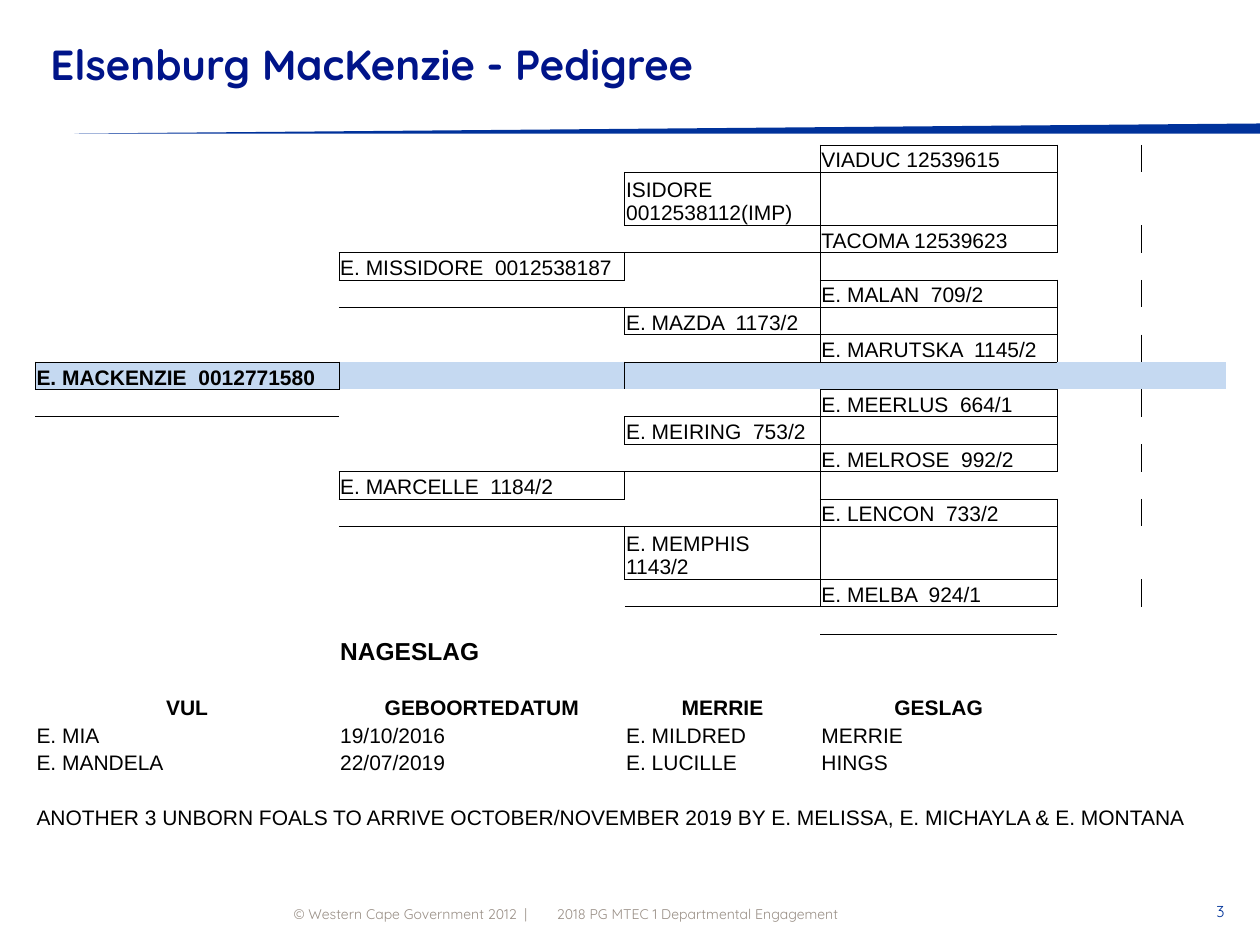
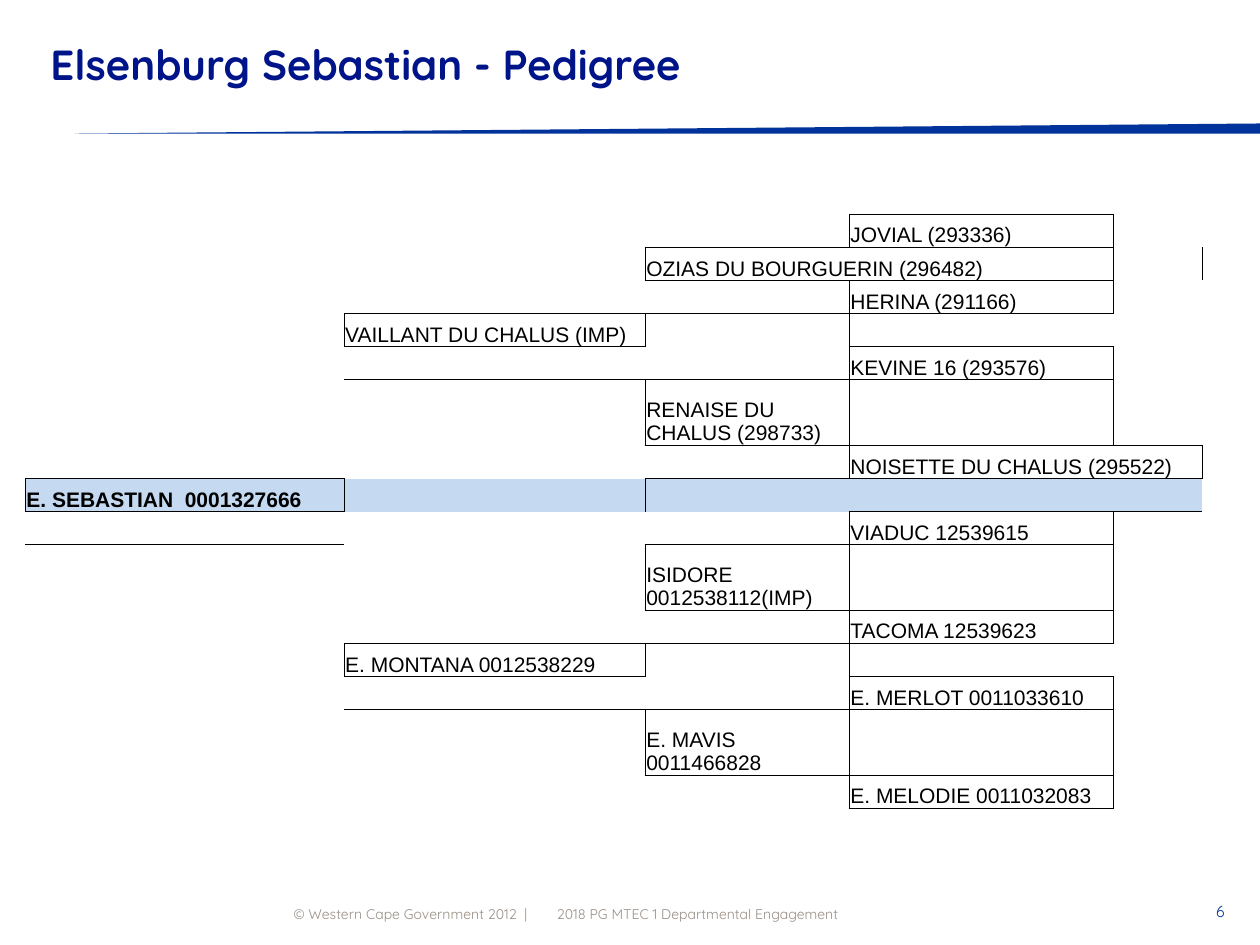
"""Build two horse pedigree slides with a shared title, band and footer."""
import collections

import lxml.etree
import pptx
import pptx.dml.color
import pptx.enum.shapes
import pptx.enum.text
import pptx.oxml.ns
import pptx.util

Inches = pptx.util.Inches
Pt = pptx.util.Pt
RGBColor = pptx.dml.color.RGBColor
Align = pptx.enum.text.PP_ALIGN
Anchor = pptx.enum.text.MSO_ANCHOR
qn = pptx.oxml.ns.qn

NAVY = RGBColor(0x00, 0x14, 0x89)
BAND_BLUE = RGBColor(0x00, 0x32, 0x9B)
NUMBER_BLUE = RGBColor(0x00, 0x33, 0x99)
FOOTER_GREY = RGBColor(0x99, 0x8F, 0x86)
ROW_BLUE = RGBColor(0xC5, 0xD9, 0xF1)
BLACK = RGBColor(0x00, 0x00, 0x00)
HEADING_FONT = "Quicksand"
TABLE_FONT = "Arial"
PLAIN_STYLE = "{2D5ABB26-0587-4C30-8999-92F81FD0307C}"

LAST_GENERATION = 3
HORSE_ROW = 7
EDGES = ("lnL", "lnR", "lnT", "lnB")

MACKENZIE_TREE = [
    ["E. MACKENZIE  0012771580"],
    ["E. MISSIDORE  0012538187", "E. MARCELLE  1184/2"],
    ["ISIDORE 0012538112(IMP)", "E. MAZDA  1173/2", "E. MEIRING  753/2", "E. MEMPHIS  1143/2"],
    ["VIADUC 12539615", "TACOMA 12539623", "E. MALAN  709/2", "E. MARUTSKA  1145/2",
     "E. MEERLUS  664/1", "E. MELROSE  992/2", "E. LENCON  733/2", "E. MELBA  924/1"],
]
SEBASTIAN_TREE = [
    ["E. SEBASTIAN  0001327666"],
    ["VAILLANT DU CHALUS (IMP)", "E. MONTANA 0012538229"],
    ["OZIAS DU BOURGUERIN (296482)", "RENAISE DU CHALUS (298733)",
     "ISIDORE 0012538112(IMP)", "E. MAVIS 0011466828"],
    ["JOVIAL (293336)", "HERINA (291166)", "KEVINE 16 (293576)",
     "NOISETTE DU CHALUS (295522)", "VIADUC 12539615", "TACOMA 12539623",
     "E. MERLOT 0011033610", "E. MELODIE 0011032083"],
]
FOAL_HEADINGS = ["VUL", "GEBOORTEDATUM", "MERRIE", "GESLAG"]
FOALS = [
    ["E. MIA", "19/10/2016", "E. MILDRED", "MERRIE"],
    ["E. MANDELA", "22/07/2019", "E. LUCILLE", "HINGS"],
]
FOAL_NOTE = ("ANOTHER 3 UNBORN FOALS TO ARRIVE OCTOBER/NOVEMBER 2019 "
             "BY E. MELISSA, E. MICHAYLA & E. MONTANA")


def add_span(para, text, font, size, color, bold=False):
    """Add one formatted run to a paragraph."""
    span = para.add_run()
    span.text = text
    span.font.name = font
    span.font.size = Pt(size)
    span.font.bold = bold
    span.font.color.rgb = color


def add_label(page, place, text, size, color, insets, anchor, align=Align.LEFT, bold=False):
    """Add a one-line text box in the heading font."""
    box = page.shapes.add_textbox(*map(Inches, place))
    frame = box.text_frame
    frame.word_wrap = True
    frame.vertical_anchor = anchor
    (frame.margin_left, frame.margin_top,
     frame.margin_right, frame.margin_bottom) = map(Inches, insets)
    para = frame.paragraphs[0]
    para.alignment = align
    add_span(para, text, HEADING_FONT, size, color, bold)


def add_band(page):
    """Add the thin wedge below the title."""
    wedge = page.shapes.add_shape(
        pptx.enum.shapes.MSO_SHAPE.RIGHT_TRIANGLE,
        Inches(0.59), Inches(0.98), Inches(9.41), Inches(0.08))
    wedge.shadow.inherit = False
    wedge.fill.solid()
    wedge.fill.fore_color.rgb = BAND_BLUE
    wedge.line.fill.background()
    wedge._element.spPr.xfrm.set("flipH", "1")


def add_page(deck, title, number):
    """Add a blank page with title, band and footer."""
    page = deck.slides.add_slide(deck.slide_layouts[6])
    add_label(page, (2.25, 7.07, 2.13, 0.25), "© Western Cape Government 2012  |",
              8, FOOTER_GREY, (0.08, 0.08, 0, 0), Anchor.BOTTOM)
    add_band(page)
    add_label(page, (0.32, 0.2, 9.4, 0.61), title, 24, NAVY,
              (0.08, 0.08, 0.08, 0.08), Anchor.MIDDLE, bold=True)
    add_label(page, (4.42, 7.07, 4.53, 0.25), "2018 PG MTEC 1 Departmental Engagement",
              8, FOOTER_GREY, (0, 0.08, 0.08, 0), Anchor.BOTTOM)
    add_label(page, (9.16, 7.07, 0.56, 0.25), str(number), 9, NUMBER_BLUE,
              (0.08, 0.08, 0, 0), Anchor.MIDDLE, Align.RIGHT)
    return page


def add_grid(page, left, top, height, widths, row_count, special_rows):
    """Add an unstyled table whose ordinary rows share the remaining height."""
    table = page.shapes.add_table(
        row_count, len(widths), Inches(left), Inches(top),
        Inches(sum(widths)), Inches(height)).table
    table.first_row = table.horz_banding = False
    table._tbl.tblPr.find(qn("a:tableStyleId")).text = PLAIN_STYLE
    for column, width in zip(table.columns, widths):
        column.width = Inches(width)
    ordinary = (height - sum(special_rows.values())) / (row_count - len(special_rows))
    for index, row in enumerate(table.rows):
        row.height = Inches(special_rows.get(index, ordinary))
    for cell in table.iter_cells():
        cell.vertical_anchor = Anchor.BOTTOM
        cell.margin_left = cell.margin_right = cell.margin_top = Inches(0.01)
        cell.margin_bottom = 0
        lxml.etree.SubElement(cell.text_frame.paragraphs[0]._p,
                              qn("a:endParaRPr"), sz="1200")
    return table


def write_cell(cell, text, size=12, bold=False, align=Align.LEFT):
    """Write black text in a table cell."""
    para = cell.text_frame.paragraphs[0]
    para.alignment = align
    add_span(para, text, TABLE_FONT, size, BLACK, bold)


def box_edges(row, first, last):
    """Yield the cell edges, own and neighbouring, that frame a box."""
    for edge in EDGES:
        yield row, first, edge
    yield row, last, "lnR"
    yield row, first - 1, "lnR"
    yield row, last + 1, "lnL"
    for column in range(first, last + 1):
        yield row, column, "lnT"
        yield row, column, "lnB"
        yield row - 1, column, "lnB"
        yield row + 1, column, "lnT"


def draw_edges(table, edges):
    """Draw thin black lines on the given cell edges."""
    by_cell = collections.defaultdict(set)
    for row, column, edge in edges:
        if 0 <= row < len(table.rows) and 0 <= column < len(table.columns):
            by_cell[row, column].add(edge)
    for (row, column), names in by_cell.items():
        properties = table.cell(row, column)._tc.get_or_add_tcPr()
        for name in sorted(names, key=EDGES.index):
            line = lxml.etree.SubElement(properties, qn("a:" + name), w=str(Pt(0.5)))
            fill = lxml.etree.SubElement(line, qn("a:solidFill"))
            lxml.etree.SubElement(fill, qn("a:srgbClr"), val=str(BLACK))


def fill_pedigree(table, generations, wide_boxes=()):
    """Place each generation in its column, every horse between its parents."""
    edges = []
    for generation, horses in enumerate(generations):
        step = 2 ** (LAST_GENERATION - generation)
        for index, horse in enumerate(horses):
            row = (2 * index + 1) * step - 1
            last = generation
            cell = table.cell(row, generation)
            if horse in wide_boxes:
                last += 1
                cell.merge(table.cell(row, last))
            write_cell(cell, horse, bold=generation == 0)
            edges.extend(box_edges(row, generation, last))
    draw_edges(table, edges)
    for cell in table.iter_cells():
        cell.fill.background()
    for cell in table.rows[HORSE_ROW].cells:
        cell.fill.solid()
        cell.fill.fore_color.rgb = ROW_BLUE


def fill_offspring(table):
    """Write the offspring list below the pedigree."""
    write_cell(table.cell(16, 1), "NAGESLAG", size=14, bold=True)
    for column, heading in enumerate(FOAL_HEADINGS):
        write_cell(table.cell(18, column), heading, bold=True, align=Align.CENTER)
    for row, foal in enumerate(FOALS, start=19):
        for column, value in enumerate(foal):
            write_cell(table.cell(row, column), value)
    note = table.cell(22, 0)
    note.merge(table.cell(22, 5))
    write_cell(note, FOAL_NOTE)


def main():
    """Build and save the deck."""
    deck = pptx.Presentation()
    deck.slide_width, deck.slide_height = Inches(10), Inches(7.5)

    page = add_page(deck, "Elsenburg MacKenzie - Pedigree", 3)
    table = add_grid(page, 0.28, 1.15, 5.44, [2.41, 2.27, 1.55, 1.88, 0.67, 0.67],
                     23, {1: 0.42, 13: 0.42, 16: 0.25})
    fill_pedigree(table, MACKENZIE_TREE)
    fill_offspring(table)

    page = add_page(deck, "Elsenburg Sebastian - Pedigree", 6)
    table = add_grid(page, 0.2, 1.7, 4.72, [2.53, 2.39, 1.62, 2.1, 0.7],
                     15, {5: 0.52, 9: 0.52, 13: 0.52})
    fill_pedigree(table, SEBASTIAN_TREE,
                  ("OZIAS DU BOURGUERIN (296482)", "NOISETTE DU CHALUS (295522)"))

    deck.save("out.pptx")


if __name__ == "__main__":
    main()
